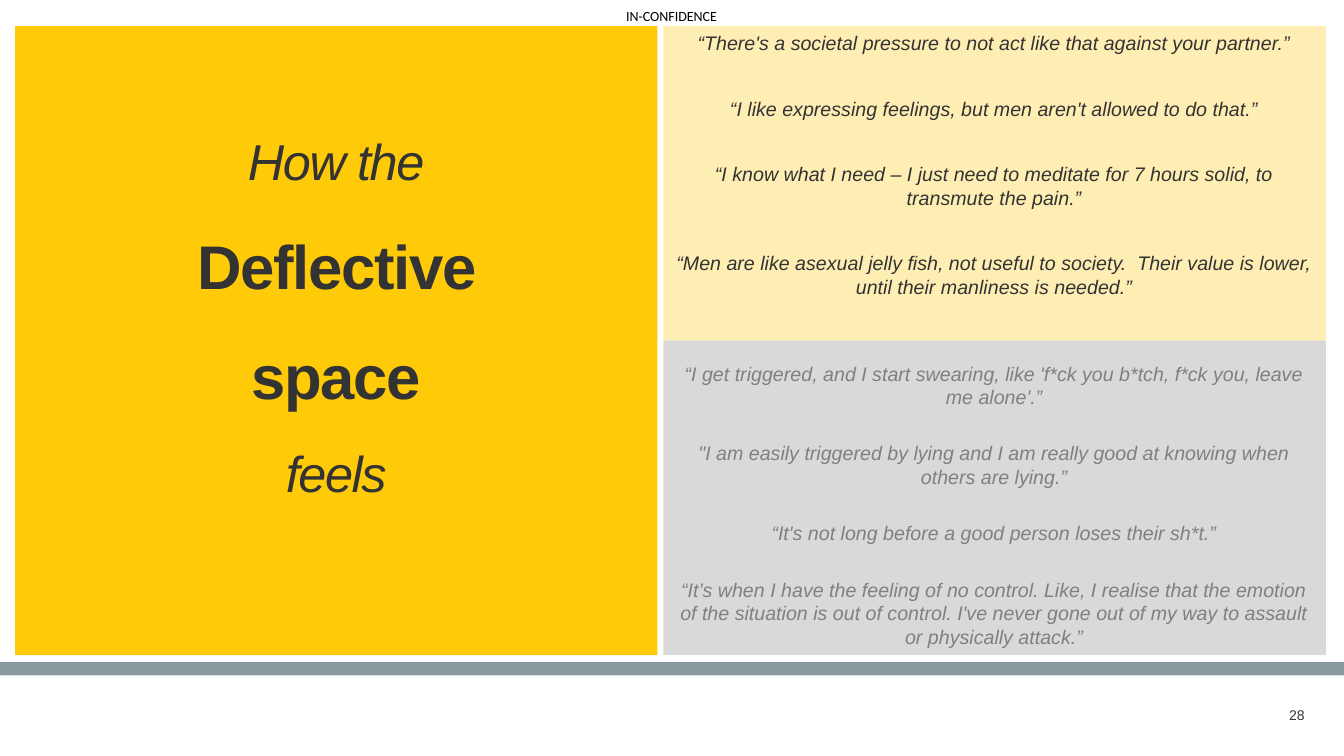
from dataclasses import dataclass
from typing import NamedTuple

from lxml.etree import SubElement
from pptx import Presentation
from pptx.dml.color import RGBColor
from pptx.enum.shapes import MSO_SHAPE
from pptx.enum.text import MSO_ANCHOR, MSO_AUTO_SIZE, PP_ALIGN
from pptx.oxml.ns import qn
from pptx.slide import Slide
from pptx.text.text import TextFrame
from pptx.util import Emu, Pt

EMU_PER_PX = 9144
DARK = "333333"
GREY = "808080"
YELLOW = "FFCA08"
QUOTE_LEFT, QUOTE_WIDTH = 660, 652


class Box(NamedTuple):
    left: int
    top: int
    width: int
    height: int


@dataclass(frozen=True)
class Panel:
    box: Box
    fill: str
    opacity: int = 100


@dataclass(frozen=True)
class Quote:
    text: str
    top: int
    height: int
    color: str
    anchor: MSO_ANCHOR = MSO_ANCHOR.TOP


@dataclass(frozen=True)
class TitleLine:
    text: str
    size: int
    bold: bool


PANELS = [
    Panel(Box(15, 26, 637, 624), YELLOW),
    Panel(Box(0, 657, 1333, 13), "8B9A9F"),
    Panel(Box(658, 26, 657, 312), YELLOW, opacity=30),
    Panel(Box(658, 338, 657, 312), "D9D9D9"),
]

TITLE_LINES = [
    TitleLine("How the", 36, False),
    TitleLine("Deflective space", 44, True),
    TitleLine("feels", 36, False),
]

QUOTES = [
    Quote("“There's a societal pressure to not act like that against your partner.”", 26, 34, DARK),
    Quote("“I like expressing feelings, but men aren't allowed to do that.”", 91, 34, DARK),
    Quote("“I know what I need – I just need to meditate for 7 hours solid, "
          "to transmute the pain.”", 156, 57, DARK),
    Quote("“Men are like asexual jelly fish, not useful to society.  Their value is lower, "
          "until their manliness is needed.”", 244, 57, DARK, MSO_ANCHOR.BOTTOM),
    Quote("“I get triggered, and I start swearing, like 'f*ck you b*tch, f*ck you, "
          "leave me alone'.”", 354, 57, GREY),
    Quote("\"I am easily triggered by lying and I am really good at knowing when "
          "others are lying.”", 433, 57, GREY),
    Quote("“It's not long before a good person loses their sh*t.”", 512, 34, GREY),
    Quote("“It’s when I have the feeling of no control. Like, I realise that the emotion "
          "of the situation is out of control. I've never gone out of my way to assault "
          "or physically attack.”", 567, 81, GREY, MSO_ANCHOR.BOTTOM),
]


def px(length: int) -> Emu:
    return Emu(length * EMU_PER_PX)


def rgb(color: str) -> RGBColor:
    return RGBColor.from_string(color)


def add_panel(slide: Slide, panel: Panel) -> None:
    rectangle = slide.shapes.add_shape(MSO_SHAPE.RECTANGLE, *map(px, panel.box))
    rectangle.shadow.inherit = False
    rectangle.fill.solid()
    rectangle.fill.fore_color.rgb = rgb(panel.fill)
    rectangle.line.fill.background()
    if panel.opacity < 100:
        fill_color = rectangle.element.find(".//" + qn("a:srgbClr"))
        SubElement(fill_color, qn("a:alpha")).set("val", str(panel.opacity * 1000))


def add_frame(slide: Slide, box: Box, anchor: MSO_ANCHOR, align: PP_ALIGN,
              inset: bool = False, wrap: bool = True, grow: bool = False) -> TextFrame:
    frame = slide.shapes.add_textbox(*map(px, box)).text_frame
    frame.word_wrap = wrap
    frame.auto_size = MSO_AUTO_SIZE.SHAPE_TO_FIT_TEXT if grow else MSO_AUTO_SIZE.NONE
    frame.vertical_anchor = anchor
    frame.margin_left = frame.margin_right = px(10 if inset else 0)
    frame.margin_top = frame.margin_bottom = px(5 if inset else 0)
    frame.paragraphs[0].alignment = align
    return frame


def write(frame: TextFrame, text: str, *, size: int, color: str = DARK, font: str = "Arial",
          bold: bool = False, italic: bool = False, tracking: int = 0) -> None:
    run = frame.paragraphs[0].add_run()
    run.text = text
    run.font.size = Pt(size)
    run.font.name = font
    run.font.bold = bold
    run.font.italic = italic
    run.font.color.rgb = rgb(color)
    if tracking:
        run.font._element.set("spc", str(tracking * 100))


def add_title(slide: Slide) -> None:
    title = add_frame(slide, Box(127, 106, 413, 386), MSO_ANCHOR.MIDDLE, PP_ALIGN.CENTER)
    title.paragraphs[0].line_spacing = 1.5
    for index, line in enumerate(TITLE_LINES):
        if index:
            title.paragraphs[0].add_line_break()
        write(title, line.text, size=line.size, bold=line.bold,
              italic=not line.bold, tracking=-1)


def add_quote(slide: Slide, quote: Quote) -> None:
    box = Box(QUOTE_LEFT, quote.top, QUOTE_WIDTH, quote.height)
    frame = add_frame(slide, box, quote.anchor, PP_ALIGN.CENTER, inset=True, grow=True)
    write(frame, quote.text, size=14, color=quote.color, italic=True)


def main() -> None:
    deck = Presentation()
    deck.slide_width, deck.slide_height = px(1333), px(750)
    slide = deck.slides.add_slide(deck.slide_layouts[6])

    page_number = add_frame(slide, Box(1256, 699, 38, 21), MSO_ANCHOR.MIDDLE, PP_ALIGN.RIGHT)
    write(page_number, "28", size=10)
    marking = add_frame(slide, Box(621, 7, 94, 17), MSO_ANCHOR.TOP, PP_ALIGN.LEFT,
                        wrap=False, grow=True)
    write(marking, "IN-CONFIDENCE", size=10, color="000000", font="Calibri")

    for panel in PANELS:
        add_panel(slide, panel)
    add_title(slide)
    for quote in QUOTES:
        add_quote(slide, quote)

    deck.save("out.pptx")


if __name__ == "__main__":
    main()
